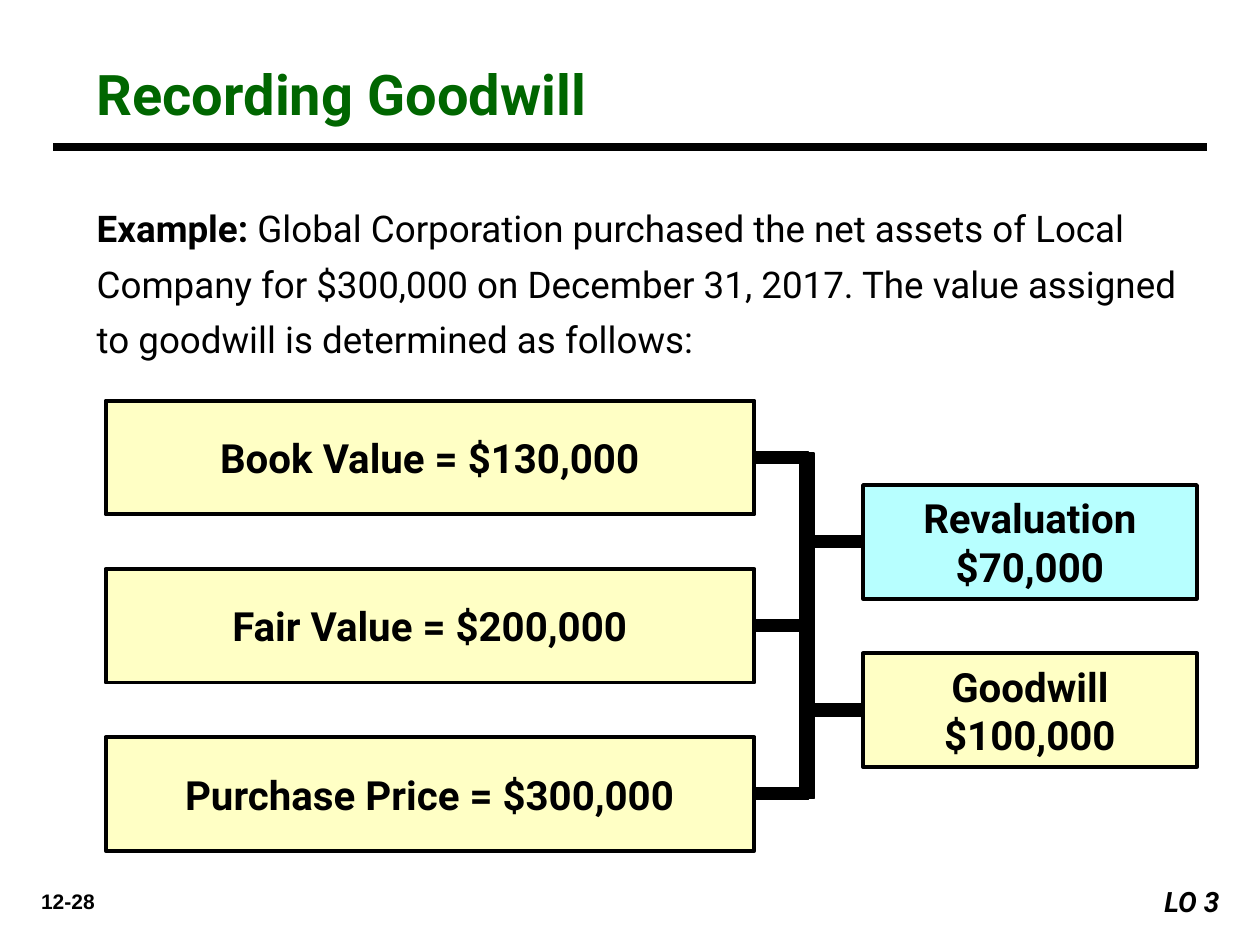
from pptx import Presentation
from pptx.dml.color import RGBColor
from pptx.enum.shapes import MSO_CONNECTOR, MSO_SHAPE
from pptx.enum.text import MSO_ANCHOR, PP_ALIGN
from pptx.oxml.ns import qn
from pptx.util import Cm, Pt

# Content
TITLE = "Recording Goodwill"
LEAD = "Example: "
BODY = ("Global Corporation purchased the net assets of Local Company for "
        "$300,000 on December 31, 2017. The value assigned to goodwill is "
        "determined as follows:")
VALUES = [("Book Value = $130,000",), ("Fair Value = $200,000",),
          ("Purchase Price = $300,000",)]
GAPS = [("Revaluation", "$70,000"), ("Goodwill", "$100,000")]
PAGE, GOAL = "12-28", "LO 3 "

# Formats
HUES = {"ink": "000000", "green": "006600", "cream": "FFFFC5",
        "aqua": "B7FFFF", "white": "FFFFFF"}
FONTS = {
    "title": {"name": "Roboto", "size": Pt(32), "bold": True},
    "lead": {"name": "Roboto", "size": Pt(21), "bold": True},
    "body": {"name": "Roboto", "size": Pt(21), "bold": False},
    "box": {"name": "Roboto", "size": Pt(23), "bold": True},
    "page": {"name": "Arial", "size": Pt(12), "bold": True},
    "goal": {"name": "Roboto", "size": Pt(16), "bold": True, "italic": True},
}

# Layout in centimetres
BOX_H, STEP = 2.29, 3.39
STUB_W, STUB_H = 1.07, 0.23
# column: texts, fills, left, top, width, left of its stubs
COLS = [(VALUES, ["cream"] * 3, 2.13, 8.08, 13.08, 15.23),
        (GAPS, ["aqua", "cream"], 17.4, 9.78, 6.73, 16.29)]

deck = Presentation()
deck.slide_width, deck.slide_height = Cm(25.4), Cm(19.05)
slide = deck.slides.add_slide(deck.slide_layouts[6])


def hue(key):
    return RGBColor.from_string(HUES[key])


def write(frame, lines, align=PP_ALIGN.LEFT, color="ink"):
    """Fill a frame with lines, each a list of (text, style) runs."""
    for i, runs in enumerate(lines):
        para = frame.add_paragraph() if i else frame.paragraphs[0]
        para.alignment = align
        for text, style in runs:
            run = para.add_run()
            run.text = text
            for key, val in FONTS[style].items():
                setattr(run.font, key, val)
            run.font.color.rgb = hue(color)


def label(place, runs, **look):
    frame = slide.shapes.add_textbox(*map(Cm, place)).text_frame
    frame.word_wrap = True
    write(frame, [runs], **look)
    return frame


def block(place, fill, width):
    shape = slide.shapes.add_shape(MSO_SHAPE.RECTANGLE, *map(Cm, place))
    shape.shadow.inherit = False
    shape.fill.solid()
    shape.fill.fore_color.rgb = hue(fill)
    if width:
        shape.line.color.rgb = hue("ink")
        shape.line.width = Pt(width)
    else:
        shape.line.fill.background()
    return shape


# Value boxes and their stubs, joined by one upright bar
block((16.13, 9.14, 0.28, 6.96), "ink", 1)
for texts, fills, left, top, wide, stub in COLS:
    for i, (lines, fill) in enumerate(zip(texts, fills)):
        y = top + i * STEP
        frame = block((left, y, wide, BOX_H), fill, 2.25).text_frame
        frame.word_wrap = False
        frame.vertical_anchor = MSO_ANCHOR.MIDDLE
        write(frame, [[(line, "box")] for line in lines], PP_ALIGN.CENTER)
        block((stub, y + (BOX_H - STUB_H) / 2, STUB_W, STUB_H), "ink", 1)

# Title, rule and example
label((1.7, 1.07, 21.16, 1.55), [(TITLE, "title")], color="green")
rule = slide.shapes.add_connector(MSO_CONNECTOR.STRAIGHT, Cm(1.07), Cm(2.97),
                                  Cm(24.33), Cm(2.97))
rule.line.color.rgb = hue("ink")
rule.line.width = Pt(4.5)
props = rule._element.spPr
props.append(props.makeelement(qn("a:effectLst"), {}))
text = label((1.7, 3.81, 22.43, 3.63), [(LEAD, "lead"), (BODY, "body")])
text.paragraphs[0].line_spacing = 1.25

# Footer
label((0.2, 17.78, 2.34, 0.76), [(PAGE, "page")], align=PP_ALIGN.CENTER)
mark = block((22.86, 17.7, 2.11, 0.94), "white", 0).text_frame
mark.word_wrap = True
mark.vertical_anchor = MSO_ANCHOR.TOP
write(mark, [[(GOAL, "goal")]], PP_ALIGN.RIGHT)

deck.save("out.pptx")
